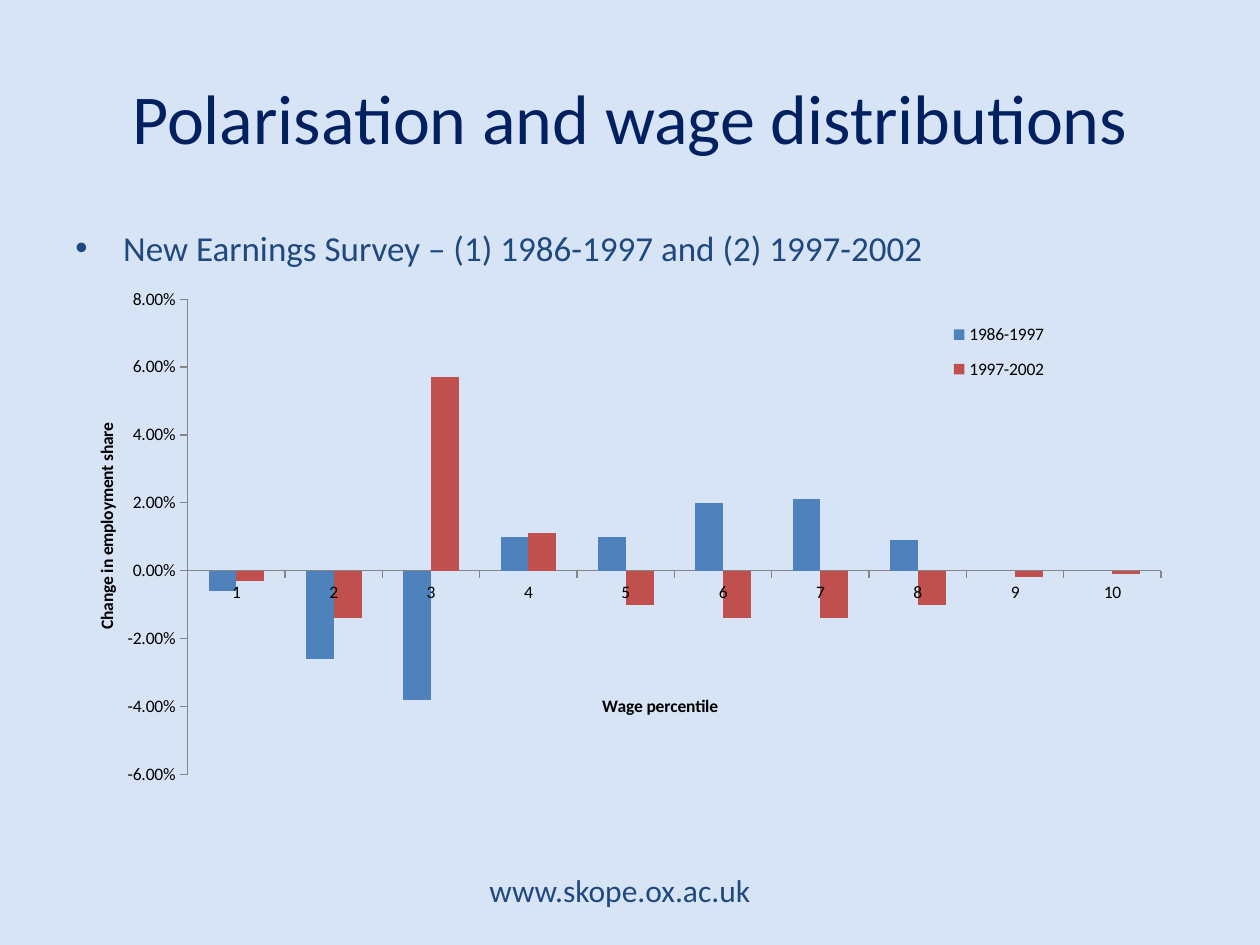
from lxml import etree
from pptx import Presentation
from pptx.chart.data import CategoryChartData
from pptx.dml.color import RGBColor
from pptx.enum.chart import XL_CHART_TYPE, XL_LEGEND_POSITION, XL_TICK_MARK
from pptx.enum.text import MSO_ANCHOR, PP_ALIGN
from pptx.oxml.ns import qn
from pptx.util import Inches, Pt

COLUMNS = XL_CHART_TYPE.COLUMN_CLUSTERED
RIGHT = XL_LEGEND_POSITION.RIGHT
OUTSIDE = XL_TICK_MARK.OUTSIDE
CENTER, LEFT = PP_ALIGN.CENTER, PP_ALIGN.LEFT
MIDDLE, TOP = MSO_ANCHOR.MIDDLE, MSO_ANCHOR.TOP

THEME = {
    "font": "Calibri",
    "background": "D7E4F5",
    "title": "002060",
    "text": "1F497D",
    "chart_text": "000000",
    "axis": "868686",
    "title_size": 40,
    "body_size": 20,
    "footer_size": 18,
    "chart_size": 10,
}
TITLE = "Polarisation and wage distributions"
BULLET = "New Earnings Survey – (1) 1986-1997 and (2) 1997-2002"
FOOTER = "www.skope.ox.ac.uk"
PERCENTILES = [str(number) for number in range(1, 11)]
SERIES = [
    ("1986-1997", "4F81BD",
     (-0.006, -0.026, -0.038, 0.01, 0.01, 0.02, 0.021, 0.009, 0, 0)),
    ("1997-2002", "C0504D",
     (-0.003, -0.014, 0.057, 0.011, -0.01, -0.014, -0.014, -0.01, -0.002, -0.001)),
]


def color(name):
    return RGBColor.from_string(THEME[name])


def add_text(slide, box, text, size, color_name, alignment, anchor, bullet=False):
    shape = slide.shapes.add_textbox(*map(Inches, box))
    frame = shape.text_frame
    frame.word_wrap = True
    frame.vertical_anchor = anchor
    paragraph = frame.paragraphs[0]
    paragraph.alignment = alignment
    if bullet:
        properties = paragraph._p.get_or_add_pPr()
        properties.set("marL", str(Inches(0.38)))
        properties.set("indent", str(-Inches(0.38)))
        etree.SubElement(properties, qn("a:buFont")).set("typeface", "Arial")
        etree.SubElement(properties, qn("a:buChar")).set("char", "•")
    run = paragraph.add_run()
    run.text = text
    run.font.name = THEME["font"]
    run.font.size = Pt(THEME[size])
    run.font.color.rgb = color(color_name)


def place(element, index, inner=False, **percents):
    """Give a chart part a manual layout in percents of the chart."""
    for old_layout in element.findall(qn("c:layout")):
        element.remove(old_layout)
    layout = etree.Element(qn("c:layout"))
    manual = etree.SubElement(layout, qn("c:manualLayout"))
    settings = [("layoutTarget", "inner")] if inner else []
    settings += [("xMode", "edge"), ("yMode", "edge")]
    settings += [(tag, percent / 100) for tag, percent in percents.items()]
    for tag, value in settings:
        etree.SubElement(manual, qn(f"c:{tag}")).set("val", str(value))
    element.insert(index, layout)


def style_axis(axis, title, x, y):
    axis.has_major_gridlines = False
    axis.major_tick_mark = OUTSIDE
    axis.format.line.color.rgb = color("axis")
    axis.format.line.width = Pt(0.75)
    axis.has_title = True
    run = axis.axis_title.text_frame.paragraphs[0].add_run()
    run.text = title
    run.font.name = THEME["font"]
    run.font.size = Pt(THEME["chart_size"])
    run.font.bold = True
    run.font.color.rgb = color("chart_text")
    place(axis.axis_title._element, 1, x=x, y=y)


def add_wage_chart(slide):
    data = CategoryChartData(number_format="0.00%")
    data.categories = PERCENTILES
    for name, _, values in SERIES:
        data.add_series(name, values)
    box = map(Inches, (0.59, 2.25, 8.82, 4.02))
    chart = slide.shapes.add_chart(COLUMNS, *box, data).chart
    chart.has_title = False
    chart.font.name = THEME["font"]
    chart.font.size = Pt(THEME["chart_size"])
    chart.font.color.rgb = color("chart_text")

    plot = chart.plots[0]
    plot.vary_by_categories = False
    plot.gap_width = 150
    plot.overlap = 0
    for series, (_, fill, _) in zip(plot.series, SERIES):
        series.invert_if_negative = False
        series.format.fill.solid()
        series.format.fill.fore_color.rgb = RGBColor.from_string(fill)

    style_axis(chart.category_axis, "Wage percentile", 47.2, 80.6)
    axis = chart.value_axis
    style_axis(axis, "Change in employment share", 1.6, 26.8)
    axis.minimum_scale, axis.maximum_scale, axis.major_unit = -0.06, 0.08, 0.02
    axis.tick_labels.number_format = "0.00%"
    axis.tick_labels.number_format_is_linked = False

    chart.has_legend = True
    chart.legend.position = RIGHT
    chart.legend.include_in_layout = False
    place(chart.legend._element, 1, x=77.7, y=5.2, w=11, h=16.6)
    plot_area = chart._chartSpace.chart.plotArea
    place(plot_area, 0, inner=True, x=10.2, y=3.1, w=87.6, h=93.8)


def main():
    presentation = Presentation()
    presentation.slide_width, presentation.slide_height = Inches(10), Inches(7.5)
    slide = presentation.slides.add_slide(presentation.slide_layouts[6])
    slide.background.fill.solid()
    slide.background.fill.fore_color.rgb = color("background")
    add_text(slide, (3.2, 6.86, 3.44, 0.4), FOOTER, "footer_size", "text", CENTER, MIDDLE)
    add_text(slide, (0.5, 0.3, 9, 1.25), TITLE, "title_size", "title", CENTER, MIDDLE)
    add_text(slide, (0.5, 1.75, 9, 4.95), BULLET, "body_size", "text", LEFT, TOP, bullet=True)
    add_wage_chart(slide)
    presentation.save("out.pptx")


if __name__ == "__main__":
    main()
